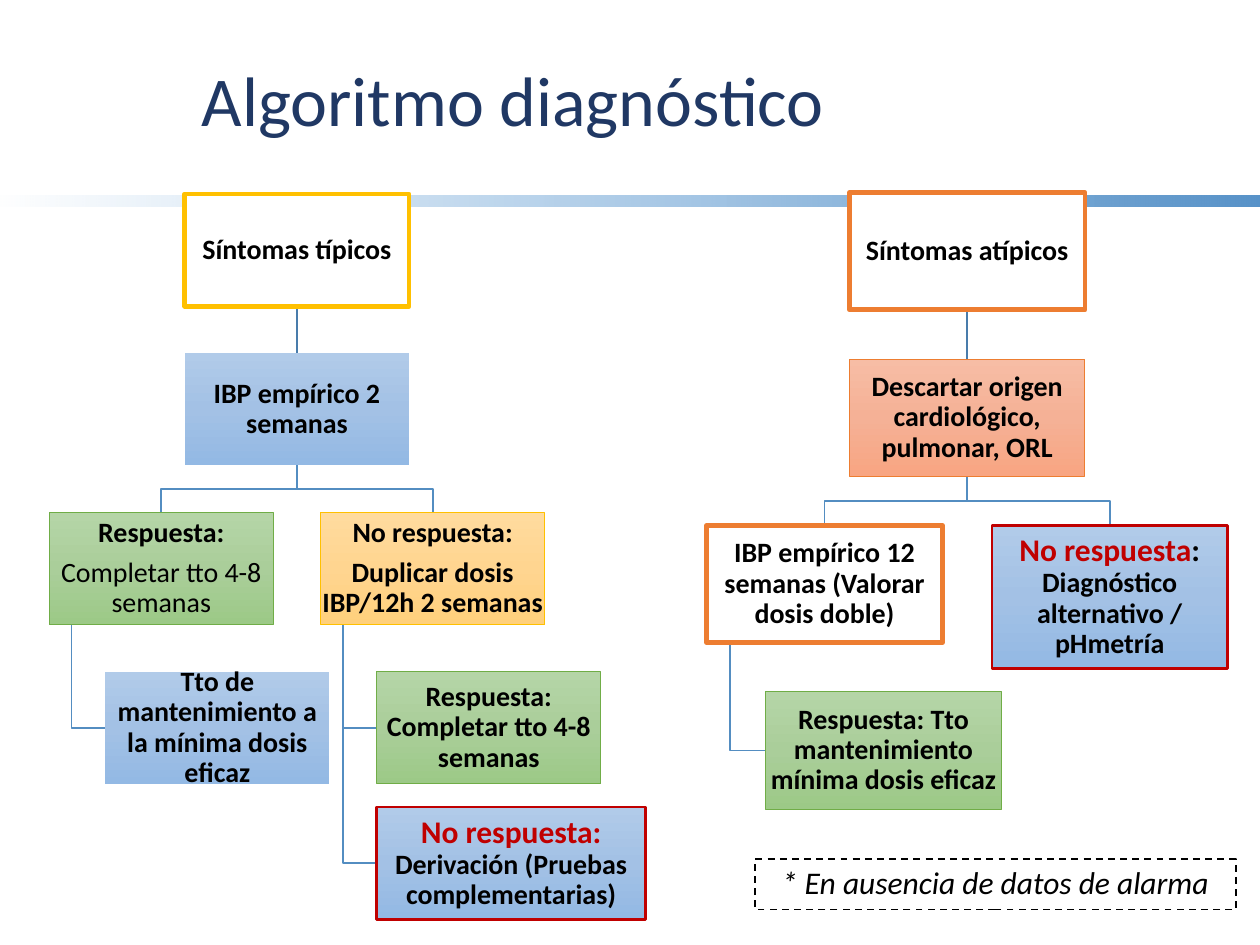
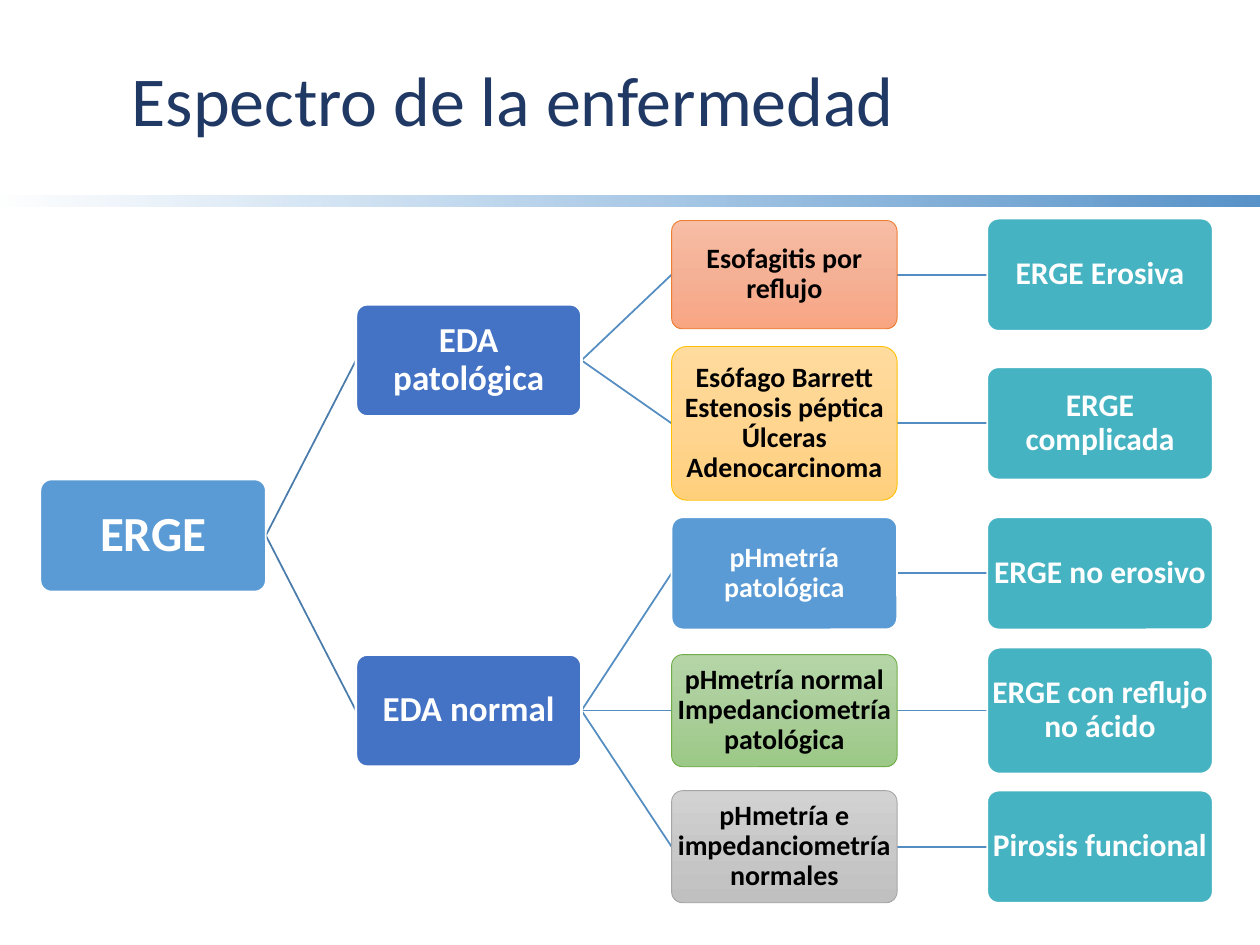
"""Build two clinical slides: a diagnostic algorithm and a disease spectrum."""
from dataclasses import dataclass
from typing import Optional

from pptx import Presentation, util as u
from pptx.dml.color import RGBColor
from pptx.enum import dml, shapes, text
from pptx.oxml import ns
from lxml import etree


@dataclass(frozen=True)
class Theme:
    font: str = "Calibri"
    title: str = "203864"
    ink: str = "000000"
    paper: str = "FFFFFF"
    alert: str = "C00000"
    stem: str = "497CAB"
    branch: str = "538DC1"
    orange: str = "ED7D31"
    gold: str = "FFC000"
    leaf: str = "46B3C2"
    azure: str = "5B9BD5"
    royal: str = "4472C4"
    band: tuple = ("5B9BD5", "5591C8")
    blues: tuple = ("B1CBE9", "A3C1E5", "93B9E4")
    greens: tuple = ("B5D5A7", "AACE9A", "9CC987")
    yellows: tuple = ("FFDB9E", "FFD590", "FFD07C")
    salmons: tuple = ("F7BDA5", "F5B196", "F8A582")
    greys: tuple = ("D2D2D2", "C8C8C8", "C0C0C0")
    title_size: int = 40
    root_size: int = 28
    group_size: int = 20
    strong_size: int = 18
    body_size: int = 16


THEME = Theme()


@dataclass(frozen=True)
class Style:
    fill: tuple = ()
    line: Optional[str] = None
    weight: float = 0.5
    ink: str = THEME.ink
    size: int = THEME.body_size
    dashed: bool = False
    margin: float = 0.01


@dataclass(frozen=True)
class Span:
    words: str
    ink: Optional[str] = None
    size: Optional[int] = None
    bold: bool = True
    italic: bool = False


@dataclass(frozen=True)
class Area:
    left: float
    top: float
    width: float
    height: float


@dataclass(frozen=True)
class Tree:
    """Grid whose column and row steps are shares of its box."""
    left: float
    top: float
    width: float
    height: float

    def cell(self, node: "Step") -> Area:
        shift = 0.605 * node.column + (0.25 if node.hangs else 0)
        return Area(self.left + shift * self.width,
                    self.top + 1.42 * node.row * self.height,
                    self.width * node.wide, self.height * node.tall)


@dataclass(frozen=True)
class Step:
    name: str
    parent: Optional[str]
    column: int
    row: float
    style: Style
    paras: tuple
    hangs: bool = False
    wide: float = 1
    tall: float = 1


@dataclass(frozen=True)
class Stage:
    name: str
    parent: Optional[str]
    column: int
    centre: float
    style: Style
    words: str
    height: float = 0.89


BLUE = Style(THEME.blues)
GREEN = Style(THEME.greens, "70AD47")
YELLOW = Style(THEME.yellows, THEME.gold)
SALMON = Style(THEME.salmons, THEME.orange)
GREY = Style(THEME.greys, "A5A5A5")
GOLD_FRAME = Style((THEME.paper,), THEME.gold, 2.75)
ORANGE_FRAME = Style((THEME.paper,), THEME.orange, 2.75)
ALERT = Style(THEME.blues, THEME.alert, 1.5)
NOTE = Style((), THEME.ink, 1, size=THEME.strong_size, dashed=True, margin=0.1)
ROOT = Style((THEME.azure,), THEME.paper, 1, THEME.paper, THEME.root_size)
GROUP = Style((THEME.royal,), THEME.paper, 1.5, THEME.paper, THEME.group_size)
TEST = Style((THEME.azure,), THEME.paper, 1, THEME.paper)
RESULT = Style((THEME.leaf,), THEME.paper, 1, THEME.paper, THEME.strong_size)


def plain(*lines: str) -> tuple:
    """Return one bold paragraph for each line."""
    return tuple((Span(line),) for line in lines)


def alert_span(words: str) -> Span:
    """Return a larger red span."""
    return Span(words, THEME.alert, THEME.strong_size)


TYPICAL = (
    Step("typical", None, 1, 0, GOLD_FRAME, plain("Síntomas típicos")),
    Step("trial", "typical", 1, 1, BLUE, plain("IBP empírico 2 semanas")),
    Step("response", "trial", 0, 2, GREEN,
         ((Span("Respuesta:"),), (Span("Completar tto 4-8 semanas", bold=False),))),
    Step("upkeep", "response", 0, 3, BLUE,
         plain("Tto de mantenimiento a la mínima dosis eficaz"), hangs=True),
    Step("failure", "trial", 2, 2, YELLOW,
         plain("No respuesta:", "Duplicar dosis IBP/12h 2 semanas")),
    Step("late response", "failure", 2, 3, GREEN,
         plain("Respuesta: Completar tto 4-8 semanas"), hangs=True),
    Step("referral", "failure", 2, 3.85, ALERT,
         ((alert_span("No respuesta: "), Span("Derivación (Pruebas complementarias)")),),
         hangs=True, wide=1.2),
)

ATYPICAL = (
    Step("atypical", None, 1, 0, ORANGE_FRAME, plain("Síntomas atípicos")),
    Step("rule out", "atypical", 1, 1, SALMON,
         plain("Descartar origen cardiológico, pulmonar, ORL")),
    Step("trial", "rule out", 0, 2, ORANGE_FRAME,
         plain("IBP empírico 12 semanas (Valorar dosis doble)")),
    Step("upkeep", "trial", 0, 3, GREEN,
         plain("Respuesta: Tto mantenimiento mínima dosis eficaz"), hangs=True),
    Step("failure", "rule out", 2, 2, ALERT,
         ((alert_span("No respuesta"), Span(": ", size=THEME.strong_size),
           Span("Diagnóstico alternativo / pHmetría")),), tall=1.22),
)

SPECTRUM = (
    Stage("root", None, 0, 4.25, ROOT, "ERGE"),
    Stage("abnormal", "root", 1, 2.86, GROUP, "EDA patológica"),
    Stage("normal", "root", 1, 5.64, GROUP, "EDA normal"),
    Stage("reflux", "abnormal", 2, 2.18, SALMON, "Esofagitis por reflujo", 0.86),
    Stage("barrett", "abnormal", 2, 3.36, YELLOW,
          "Esófago Barrett Estenosis péptica Úlceras Adenocarcinoma", 1.22),
    Stage("acid", "normal", 2, 4.55, TEST, "pHmetría patológica"),
    Stage("impedance", "normal", 2, 5.64, GREEN,
          "pHmetría normal Impedanciometría patológica"),
    Stage("all normal", "normal", 2, 6.72, GREY,
          "pHmetría e impedanciometría normales"),
    Stage("erosive", "reflux", 3, 2.18, RESULT, "ERGE Erosiva"),
    Stage("complicated", "barrett", 3, 3.36, RESULT, "ERGE complicada"),
    Stage("non erosive", "acid", 3, 4.55, RESULT, "ERGE no erosivo"),
    Stage("non acid", "impedance", 3, 5.64, RESULT, "ERGE con reflujo no ácido", 1),
    Stage("functional", "all normal", 3, 6.72, RESULT, "Pirosis funcional"),
)


def rgb(colour: str) -> RGBColor:
    """Turn a hex string into a colour."""
    return RGBColor.from_string(colour)


def paint(shape, colours: tuple, angle: int = 270, fade: bool = False) -> None:
    """Fill a shape with nothing, one colour or an even gradient."""
    if not colours:
        shape.fill.background()
    elif len(colours) == 1:
        shape.fill.solid()
        shape.fill.fore_color.rgb = rgb(colours[0])
    else:
        shape.fill.gradient()
        shape.fill.gradient_angle = angle
        stops = shape._element.spPr.find(".//" + ns.qn("a:gsLst"))
        for stop in list(stops):
            stops.remove(stop)
        for index, colour in enumerate(colours):
            place = str(100000 * index // (len(colours) - 1))
            stop = etree.SubElement(stops, ns.qn("a:gs"), pos=place)
            tone = etree.SubElement(stop, ns.qn("a:srgbClr"), val=colour)
            if fade and index == 0:
                etree.SubElement(tone, ns.qn("a:alpha"), val="0")


def write(frame, paras: tuple, style: Style) -> None:
    """Write centred paragraphs run by run."""
    frame.word_wrap = True
    frame.vertical_anchor = text.MSO_ANCHOR.MIDDLE
    for index, spans in enumerate(paras):
        para = frame.add_paragraph() if index else frame.paragraphs[0]
        para.alignment = text.PP_ALIGN.CENTER
        para.line_spacing = 0.9
        para.space_after = u.Pt(0.35 * style.size)
        for span in spans:
            run = para.add_run()
            run.text = span.words
            font = run.font
            font.name, font.size = THEME.font, u.Pt(span.size or style.size)
            font.bold, font.italic = span.bold, span.italic
            font.color.rgb = rgb(span.ink or style.ink)


def draw_box(page, area: Area, style: Style, paras: tuple, rounded: bool = False):
    """Draw a styled box with its text."""
    preset = shapes.MSO_SHAPE.ROUNDED_RECTANGLE if rounded else shapes.MSO_SHAPE.RECTANGLE
    box = page.shapes.add_shape(preset, u.Inches(area.left), u.Inches(area.top),
                                u.Inches(area.width), u.Inches(area.height))
    box.shadow.inherit = False
    if rounded:
        box.adjustments[0] = 0.1
    paint(box, style.fill)
    if style.line:
        box.line.color.rgb = rgb(style.line)
        box.line.width = u.Pt(style.weight)
        if style.dashed:
            box.line.dash_style = dml.MSO_LINE.DASH
    else:
        box.line.fill.background()
    frame = box.text_frame
    frame.margin_left = frame.margin_right = u.Inches(style.margin)
    frame.margin_top = frame.margin_bottom = u.Inches(min(style.margin, 0.05))
    write(frame, paras, style)
    return box


def finish_link(page, link, colour: str) -> None:
    """Colour a link and send it behind the boxes."""
    link.line.color.rgb = rgb(colour)
    link.line.width = u.Pt(1)
    page.shapes._spTree.insert(2, link._element)


def join(page, start, end, sides: tuple, colour: str) -> None:
    """Join two boxes with a straight connector."""
    link = page.shapes.add_connector(shapes.MSO_CONNECTOR.STRAIGHT, 0, 0, 0, 0)
    link.begin_connect(start, sides[0])
    link.end_connect(end, sides[1])
    etree.SubElement(link._element.spPr, ns.qn("a:effectLst"))
    finish_link(page, link, colour)


def bend(page, start, end, hangs: bool) -> None:
    """Draw a right-angled link to a lower or hanging box."""
    low = start.top + start.height
    if hangs:
        x, y = start.left + start.width // 10, end.top + end.height // 2
        points = [(x, low), (x, y), (end.left, y)]
    else:
        x, target = (box.left + box.width // 2 for box in (start, end))
        y = (low + end.top) // 2
        points = [(x, low), (x, y), (target, y), (target, end.top)]
    builder = page.shapes.build_freeform(*points[0])
    builder.add_line_segments(points[1:], close=False)
    link = builder.convert_to_shape()
    link.shadow.inherit = False
    link.fill.background()
    finish_link(page, link, THEME.branch)


def draw_tree(page, tree: Tree, steps: tuple) -> None:
    """Draw a top-down decision tree."""
    boxes = {}
    for step in steps:
        box = boxes[step.name] = draw_box(page, tree.cell(step), step.style, step.paras)
        if step.row == 1:
            join(page, boxes[step.parent], box, (2, 0), THEME.stem)
        elif step.parent:
            bend(page, boxes[step.parent], box, step.hangs)


def draw_spectrum(page) -> None:
    """Draw the left-to-right spectrum."""
    boxes = {}
    for stage in SPECTRUM:
        area = Area(0.32 + 2.505 * stage.column, stage.centre - stage.height / 2,
                    1.79, stage.height)
        box = boxes[stage.name] = draw_box(page, area, stage.style, plain(stage.words), True)
        if stage.parent:
            colour = THEME.stem if stage.column == 1 else THEME.branch
            join(page, boxes[stage.parent], box, (3, 1), colour)


def add_page(deck, layout, title: str):
    """Add a page with its title."""
    page = deck.slides.add_slide(layout)
    write(page.shapes.title.text_frame, ((Span(title, bold=False),),),
          Style(ink=THEME.title, size=THEME.title_size))
    return page


def prepare_layout(layout, page) -> None:
    """Place the shared title area and the fading band on the layout."""
    title = layout.placeholders[0]
    title.left, title.top = u.Inches(0.35), u.Inches(0.1)
    title.width, title.height = u.Inches(7.44), u.Inches(1.45)
    band = draw_box(page, Area(-0.06, 1.55, 10.2, 0.09), Style(), ())
    paint(band, THEME.band, 0, fade=True)
    layout.shapes._spTree.insert(2, band._element)


def main() -> None:
    """Build and save the deck."""
    deck = Presentation()
    deck.slide_width, deck.slide_height = u.Inches(10), u.Inches(7.5)
    layout = deck.slide_layouts[5]
    page = add_page(deck, layout, "Algoritmo diagnóstico")
    prepare_layout(layout, page)
    draw_tree(page, Tree(0.39, 1.54, 1.78, 0.89), TYPICAL)
    draw_tree(page, Tree(5.61, 1.53, 1.87, 0.93), ATYPICAL)
    draw_box(page, Area(5.99, 6.82, 3.82, 0.4), NOTE,
             ((Span("* En ausencia de datos de alarma", bold=False, italic=True),),))
    draw_spectrum(add_page(deck, layout, "Espectro de la enfermedad"))
    deck.save("out.pptx")


if __name__ == "__main__":
    main()
